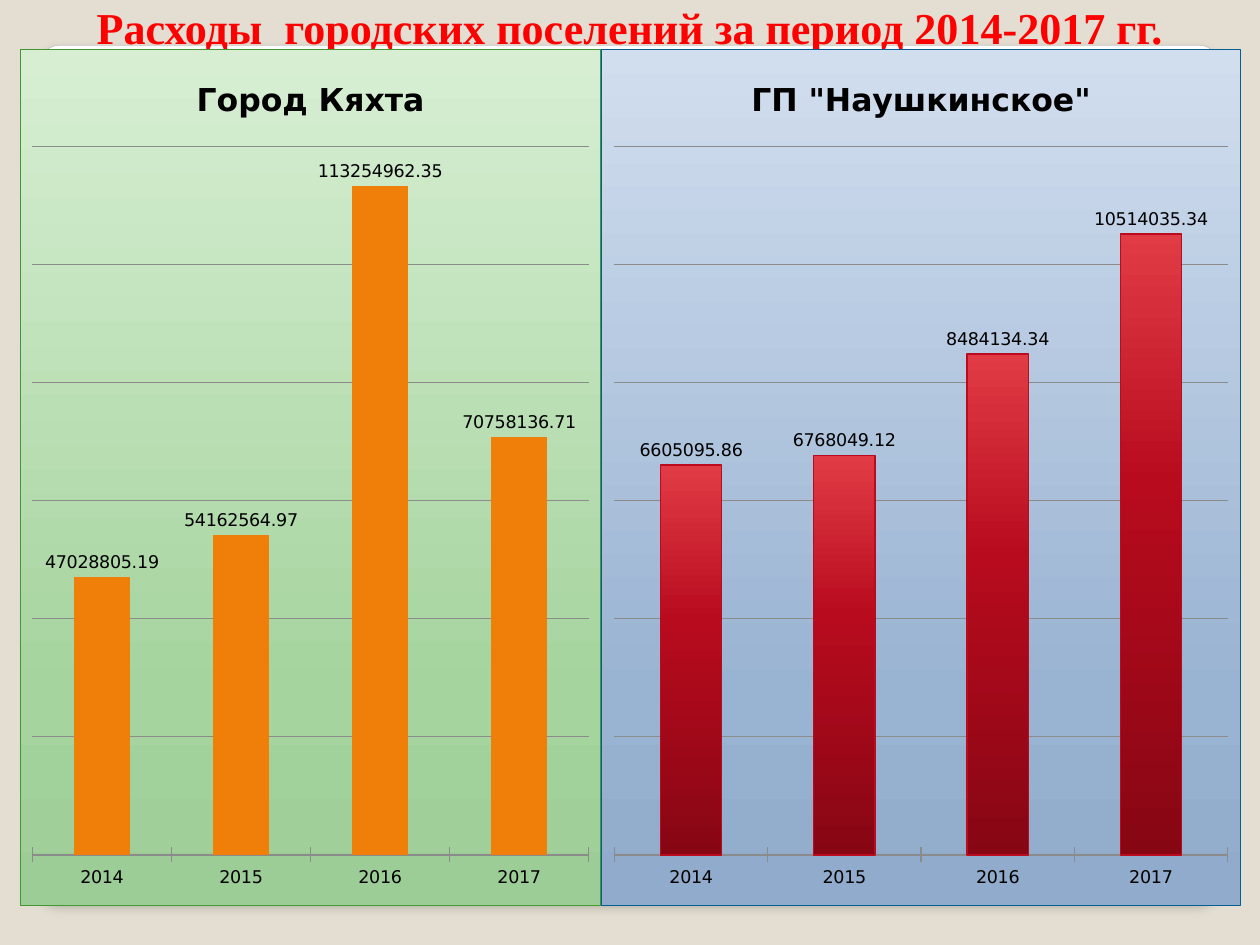
import pptx
import pptx.util
import pptx.oxml
import pptx.oxml.ns
import pptx.chart.data
import pptx.dml.color
import pptx.enum.chart
import pptx.enum.shapes
import pptx.enum.text

Pt, Inches = pptx.util.Pt, pptx.util.Inches
RGB = pptx.dml.color.RGBColor.from_string
NS = pptx.oxml.ns.nsdecls("a", "c")

THEME = {
    "back": "E3DED1", "head": "FF0000", "text": "000000", "grid": "8B8B8B",
    "edge": "A4A4A4", "serif": "Times New Roman", "sans": "DejaVu Sans",
    "head_pt": 25.2, "name_pt": 18, "text_pt": 10,
    "panel": [(0, "FFFFFF"), (98, "FFFFFF"), (99, "F7F7F7"), (100, "DADADA")],
    "green": [(0, "9DCD96"), (25, "A5D49E"), (100, "D7EED3")],
    "blue": [(0, "90ABCB"), (25, "99B3D2"), (100, "D1DEEE")],
    "red": [(0, "870614"), (60, "B80B1E"), (100, "E13C45")],
    "green_edge": "439631", "blue_edge": "035E94",
    "orange": "F07F09", "red_edge": "BC0B1F",
}


def blend(stops, angle):
    """Gradient fill as XML text."""
    marks = "".join(
        f'<a:gs pos="{pos * 1000}"><a:srgbClr val="{hue}"/></a:gs>'
        for pos, hue in stops)
    return (f'<a:gradFill {NS} rotWithShape="1"><a:gsLst>{marks}</a:gsLst>'
            f'<a:lin ang="{angle * 60000}" scaled="0"/></a:gradFill>')


def style(font, size, hue, face, bold=False):
    font.size, font.name, font.bold = Pt(size), face, bold
    font.color.rgb = RGB(hue)


# Slide
deck = pptx.Presentation()
deck.slide_width, deck.slide_height = Inches(10), Inches(7.5)
W, H = deck.slide_width, deck.slide_height
slide = deck.slides.add_slide(deck.slide_layouts[5])
slide.background.fill.solid()
slide.background.fill.fore_color.rgb = RGB(THEME["back"])

# White panel behind the charts
panel = slide.shapes.add_shape(
    pptx.enum.shapes.MSO_SHAPE.ROUNDED_RECTANGLE,
    int(W * 0.033), int(H * 0.048), int(W * 0.933), int(H * 0.904))
panel.adjustments[0] = 0.02
panel.line.color.rgb = RGB(THEME["edge"])
panel.line.width = Pt(0.16)
props = panel._element.spPr
props.insert(2, pptx.oxml.parse_xml(blend(THEME["panel"], 90)))
props.append(pptx.oxml.parse_xml(
    f'<a:effectLst {NS}><a:outerShdw blurRad="{Pt(6)}" dist="{Pt(4)}" '
    'dir="5400000" algn="t" rotWithShape="0"><a:srgbClr val="000000">'
    '<a:alpha val="25000"/></a:srgbClr></a:outerShdw></a:effectLst>'))

# Title, above the panel and below the charts
title = slide.shapes.title
panel._element.addnext(title._element)
title.left, title.top = int(W * 0.05), 0
title.width, title.height = int(W * 0.9), int(H * 0.063)
frame = title.text_frame
frame.word_wrap = True
frame.auto_size = pptx.enum.text.MSO_AUTO_SIZE.NONE
frame.vertical_anchor = pptx.enum.text.MSO_ANCHOR.BOTTOM
para = frame.paragraphs[0]
para.alignment = pptx.enum.text.PP_ALIGN.CENTER
run = para.add_run()
run.text = "Расходы  городских поселений за период 2014-2017 гг."
style(run.font, THEME["head_pt"], THEME["head"], THEME["serif"], True)

# Charts: name, left and width as shares, axis step, fill, border, values
YEARS = ["2014", "2015", "2016", "2017"]
CHARTS = [
    ("Город Кяхта", 0.016, 0.461, 20_000_000, "green", "green_edge",
     [47028805.19, 54162564.97, 113254962.35, 70758136.71]),
    ('ГП "Наушкинское"', 0.477, 0.508, 2_000_000, "blue", "blue_edge",
     [6605095.86, 6768049.12, 8484134.34, 10514035.34]),
]
for name, left, width, step, fill, edge, vals in CHARTS:
    data = pptx.chart.data.CategoryChartData()
    data.categories = YEARS
    data.add_series(name, vals)
    chart = slide.shapes.add_chart(
        pptx.enum.chart.XL_CHART_TYPE.COLUMN_CLUSTERED,
        int(W * left), int(H * 0.052), int(W * width), int(H * 0.907),
        data).chart
    style(chart.font, THEME["text_pt"], THEME["text"], THEME["sans"])
    chart.has_legend = False

    # Heading
    chart.has_title = True
    run = chart.chart_title.text_frame.paragraphs[0].add_run()
    run.text = name
    style(run.font, THEME["name_pt"], THEME["text"], THEME["sans"], True)
    chart.chart_title.include_in_layout = False

    # Axes
    scale, base = chart.value_axis, chart.category_axis
    scale.visible = False
    scale.minimum_scale, scale.maximum_scale = 0, step * 6
    scale.major_unit = step
    scale.has_major_gridlines = True
    base.major_tick_mark = pptx.enum.chart.XL_TICK_MARK.CROSS
    for line in (scale.major_gridlines.format.line, base.format.line):
        line.color.rgb = RGB(THEME["grid"])
        line.width = Pt(0.75)

    # Columns and their labels
    plot = chart.plots[0]
    plot.gap_width, plot.vary_by_categories = 150, False
    bars = plot.series[0]
    if fill == "green":
        bars.format.fill.solid()
        bars.format.fill.fore_color.rgb = RGB(THEME["orange"])
    else:
        bars.format.line.color.rgb = RGB(THEME["red_edge"])
        bars.format.line.width = Pt(0.75)
        bars._element.spPr.insert(
            0, pptx.oxml.parse_xml(blend(THEME["red"], 270)))
    tags = bars.data_labels
    tags.show_value = True
    tags.number_format, tags.number_format_is_linked = "General", False
    tags.position = pptx.enum.chart.XL_LABEL_POSITION.OUTSIDE_END
    style(tags.font, THEME["text_pt"], THEME["text"], THEME["sans"])

    # Plot area as shares of the chart
    area = chart._chartSpace.chart.plotArea
    for old in area.findall(pptx.oxml.ns.qn("c:layout")):
        area.remove(old)
    spots = "".join(f'<c:{key} val="{share}"/>' for key, share in
                    (("x", 0.02), ("y", 0.113), ("w", 0.96), ("h", 0.828)))
    area.insert(0, pptx.oxml.parse_xml(
        f'<c:layout {NS}><c:manualLayout><c:layoutTarget val="inner"/>'
        f'<c:xMode val="edge"/><c:yMode val="edge"/>{spots}'
        '</c:manualLayout></c:layout>'))

    # Chart background and border
    chart._chartSpace.chart.addnext(pptx.oxml.parse_xml(
        f'<c:spPr {NS}>{blend(THEME[fill], 270)}<a:ln w="{Pt(0.75)}">'
        f'<a:solidFill><a:srgbClr val="{THEME[edge]}"/></a:solidFill>'
        '</a:ln></c:spPr>'))

deck.save("out.pptx")
